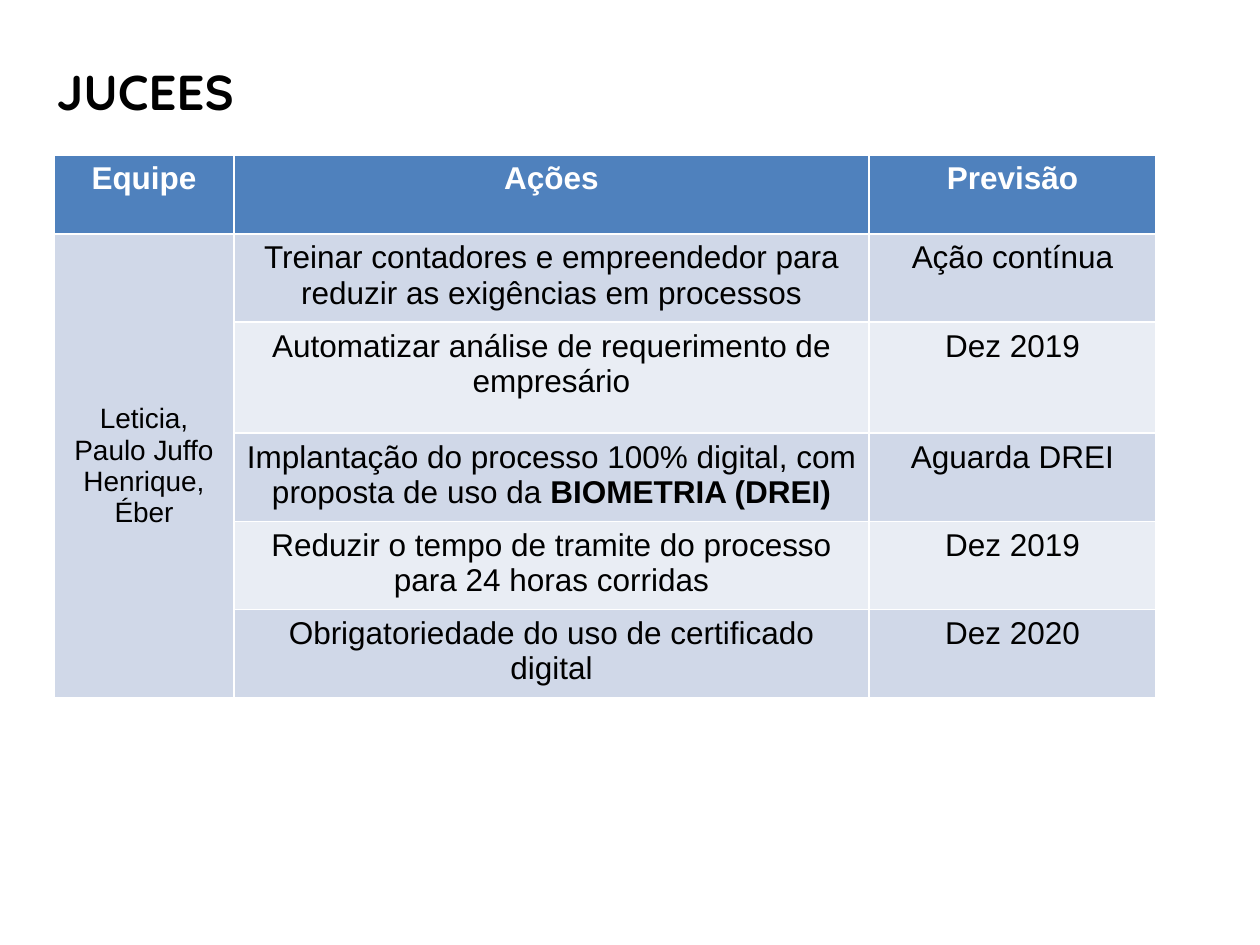
from dataclasses import dataclass

from pptx import Presentation
from pptx.dml.color import RGBColor as Rgb
from pptx.enum.text import MSO_ANCHOR as Anchor, PP_ALIGN as Align
from pptx.util import Emu, Pt

PX_PER_INCH = 126


@dataclass(frozen=True)
class Theme:
    heading_font: str = "Quicksand"
    body_font: str = "Arial"
    heading_size: int = 28
    body_size: int = 18
    team_size: int = 16
    ink: str = "000000"
    paper: str = "FFFFFF"
    header: str = "4F81BD"
    bands: tuple[str, str] = ("D0D8E8", "E9EDF4")


@dataclass(frozen=True)
class Action:
    task: str
    deadline: str
    emphasis: str = ""
    height: int = 79


THEME = Theme()
HEADINGS = ("Equipe", "Ações", "Previsão")
HEADER_HEIGHT = 79
COLUMN_WIDTHS = (180, 635, 287)
TEAM = "Leticia, Paulo Juffo Henrique,\nÉber"
ACTIONS = (
    Action("Treinar contadores e empreendedor para reduzir as exigências em processos",
           "Ação contínua"),
    Action("Automatizar análise de requerimento de empresário", "Dez 2019", height=111),
    Action("Implantação do processo 100% digital, com proposta de uso da ",
           "Aguarda DREI", emphasis="BIOMETRIA (DREI)"),
    Action("Reduzir o tempo de tramite do processo para 24 horas corridas", "Dez 2019"),
    Action("Obrigatoriedade do uso de certificado digital", "Dez 2020"),
)


def px(length: int) -> Emu:
    return Emu(round(length * 914400 / PX_PER_INCH))


def style_run(run, font: str, size: int, color: str, bold: bool) -> None:
    run.font.name = font
    run.font.size = Pt(size)
    run.font.bold = bold
    run.font.color.rgb = Rgb.from_string(color)


def fill_cell(cell, text: str, fill: str, color: str = THEME.ink,
              size: int = THEME.body_size, bold: bool = False, emphasis: str = "") -> None:
    cell.fill.solid()
    cell.fill.fore_color.rgb = Rgb.from_string(fill)
    cell.text_frame.text = text
    for paragraph in cell.text_frame.paragraphs:
        paragraph.alignment = Align.CENTER
        for run in paragraph.runs:
            style_run(run, THEME.body_font, size, color, bold)
    if emphasis:
        highlight = paragraph.add_run()
        highlight.text = emphasis
        style_run(highlight, THEME.body_font, size, color, True)


def draw_heading(slide, text: str) -> None:
    heading = slide.shapes.add_textbox(px(44), px(55), px(1091), px(675)).text_frame
    heading.word_wrap = True
    heading.text = text
    heading.paragraphs[0].alignment = Align.JUSTIFY
    style_run(heading.paragraphs[0].runs[0], THEME.heading_font, THEME.heading_size,
              THEME.ink, True)


def draw_plan(slide, actions: tuple[Action, ...]) -> None:
    heights = (HEADER_HEIGHT, *(action.height for action in actions))
    plan = slide.shapes.add_table(len(heights), len(HEADINGS), px(54), px(155),
                                  px(sum(COLUMN_WIDTHS)), px(sum(heights))).table
    for column, width in zip(plan.columns, COLUMN_WIDTHS):
        column.width = px(width)
    for row, height in zip(plan.rows, heights):
        row.height = px(height)
    for index, label in enumerate(HEADINGS):
        fill_cell(plan.cell(0, index), label, THEME.header, THEME.paper, bold=True)
    for index, action in enumerate(actions):
        band = THEME.bands[index % 2]
        fill_cell(plan.cell(index + 1, 1), action.task, band, emphasis=action.emphasis)
        fill_cell(plan.cell(index + 1, 2), action.deadline, band)
    team = plan.cell(1, 0)
    team.merge(plan.cell(len(actions), 0))
    fill_cell(team, TEAM, THEME.bands[0], size=THEME.team_size)
    team.vertical_anchor = Anchor.MIDDLE


def main() -> None:
    deck = Presentation()
    deck.slide_width, deck.slide_height = px(1260), px(945)
    slide = deck.slides.add_slide(deck.slide_layouts[6])
    draw_heading(slide, "JUCEES")
    draw_plan(slide, ACTIONS)
    deck.save("out.pptx")


if __name__ == "__main__":
    main()
